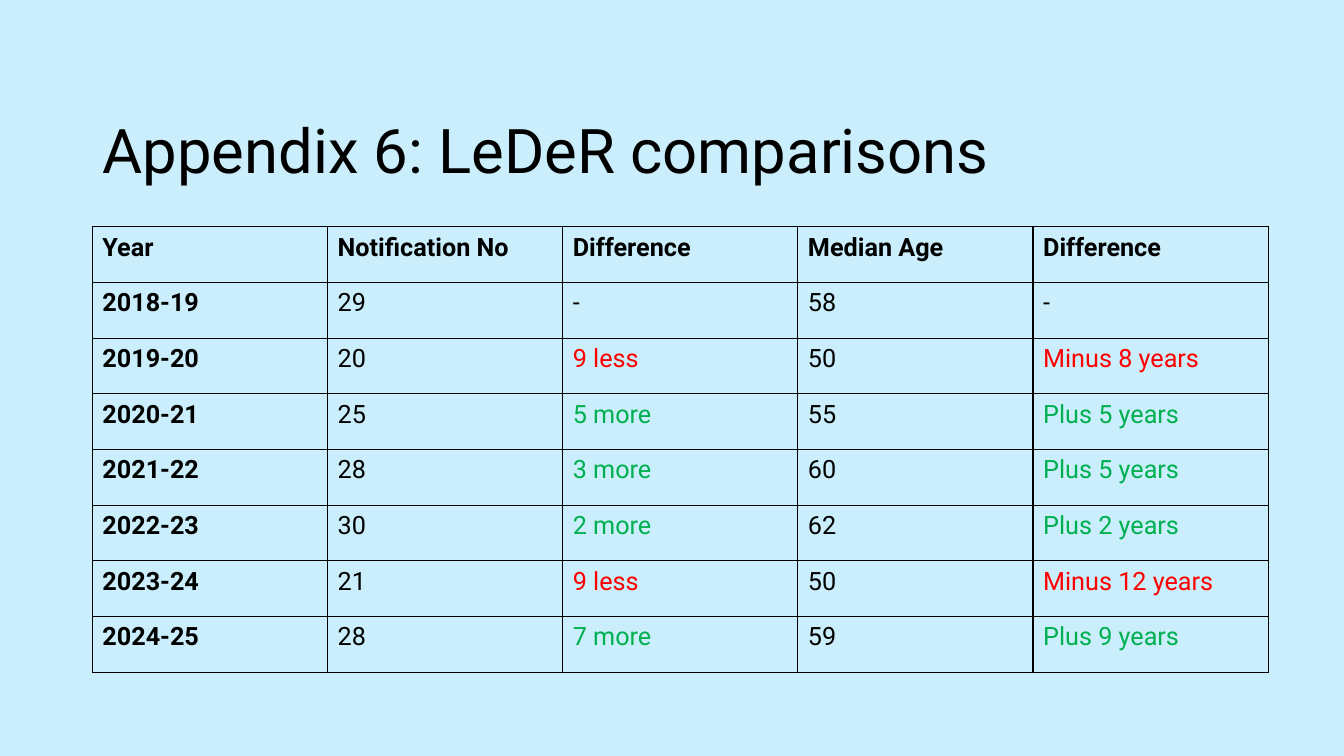
import dataclasses

import lxml.etree
import pptx
import pptx.dml.color
import pptx.enum.text
import pptx.oxml.ns
import pptx.presentation
import pptx.slide
import pptx.table
import pptx.util

Pt = pptx.util.Pt
FONT = "Roboto"
COLORS = {"back": "CAEEFB", "text": "000000", "rise": "00B050", "fall": "FF0000"}
LEFT, TOP = 66, 162
COL_WIDTH, ROW_HEIGHT = 168, 39.78
HEADS = ("Year", "Notification No", "Difference", "Median Age", "Difference")


@dataclasses.dataclass
class Record:
    year: str
    count: str
    change: str
    age: str
    shift: str


RECORDS = [
    Record("2018-19", "29", "-", "58", "-"),
    Record("2019-20", "20", "9 less", "50", "Minus 8 years"),
    Record("2020-21", "25", "5 more", "55", "Plus 5 years"),
    Record("2021-22", "28", "3 more", "60", "Plus 5 years"),
    Record("2022-23", "30", "2 more", "62", "Plus 2 years"),
    Record("2023-24", "21", "9 less", "50", "Minus 12 years"),
    Record("2024-25", "28", "7 more", "59", "Plus 9 years"),
]


def rgb(name: str) -> pptx.dml.color.RGBColor:
    return pptx.dml.color.RGBColor.from_string(COLORS[name])


def style(target: object, values: dict[str, object]) -> None:
    for key, value in values.items():
        setattr(target, key, value)


def pick_color(text: str) -> str:
    """Name the colour that suits the direction of a change."""
    if text.startswith("Minus") or text.endswith("less"):
        return "fall"
    if text.startswith("Plus") or text.endswith("more"):
        return "rise"
    return "text"


def add_border(cell: pptx.table._Cell) -> None:
    props = cell._tc.get_or_add_tcPr()
    qn = pptx.oxml.ns.qn
    for side in ("lnL", "lnR", "lnT", "lnB"):
        line = lxml.etree.SubElement(props, qn(f"a:{side}"), w=str(Pt(1)))
        fill = lxml.etree.SubElement(line, qn("a:solidFill"))
        lxml.etree.SubElement(fill, qn("a:srgbClr"), val=COLORS["text"])


def fill_cell(cell: pptx.table._Cell, text: str, bold: bool) -> None:
    add_border(cell)
    cell.fill.background()
    cell.text = text
    para = cell.text_frame.paragraphs[0]
    para.line_spacing = Pt(21.8)
    font = para.runs[0].font
    style(font, {"name": FONT, "size": Pt(18), "bold": bold})
    font.color.rgb = rgb(pick_color(text))


def set_title(slide: pptx.slide.Slide, text: str) -> None:
    title = slide.shapes.title
    style(title, {"left": Pt(LEFT), "top": Pt(57.6), "width": Pt(828), "height": Pt(104.4)})
    frame = title.text_frame
    frame.text = text
    style(frame, {
        "word_wrap": True,
        "auto_size": pptx.enum.text.MSO_AUTO_SIZE.NONE,
        "vertical_anchor": pptx.enum.text.MSO_ANCHOR.MIDDLE,
    })
    para = frame.paragraphs[0]
    style(para, {"alignment": pptx.enum.text.PP_ALIGN.LEFT, "line_spacing": 0.9})
    font = para.runs[0].font
    style(font, {"name": FONT, "size": Pt(44), "bold": False})
    font.color.rgb = rgb("text")


def add_grid(slide: pptx.slide.Slide) -> None:
    rows = [HEADS, *map(dataclasses.astuple, RECORDS)]
    table = slide.shapes.add_table(
        len(rows), len(HEADS), Pt(LEFT), Pt(TOP),
        Pt(COL_WIDTH * len(HEADS)), Pt(ROW_HEIGHT * len(rows)),
    ).table
    style(table, {"first_row": False, "horz_banding": False})
    for col in table.columns:
        col.width = Pt(COL_WIDTH)
    for r, texts in enumerate(rows):
        table.rows[r].height = Pt(ROW_HEIGHT)
        for c, text in enumerate(texts):
            fill_cell(table.cell(r, c), text, bold=r == 0 or c == 0)


def main() -> None:
    deck = pptx.Presentation()
    style(deck, {"slide_width": Pt(960), "slide_height": Pt(540)})
    slide = deck.slides.add_slide(deck.slide_layouts.get_by_name("Title Only"))
    slide.background.fill.solid()
    slide.background.fill.fore_color.rgb = rgb("back")
    set_title(slide, "Appendix 6: LeDeR comparisons")
    add_grid(slide)
    deck.save("out.pptx")


if __name__ == "__main__":
    main()
